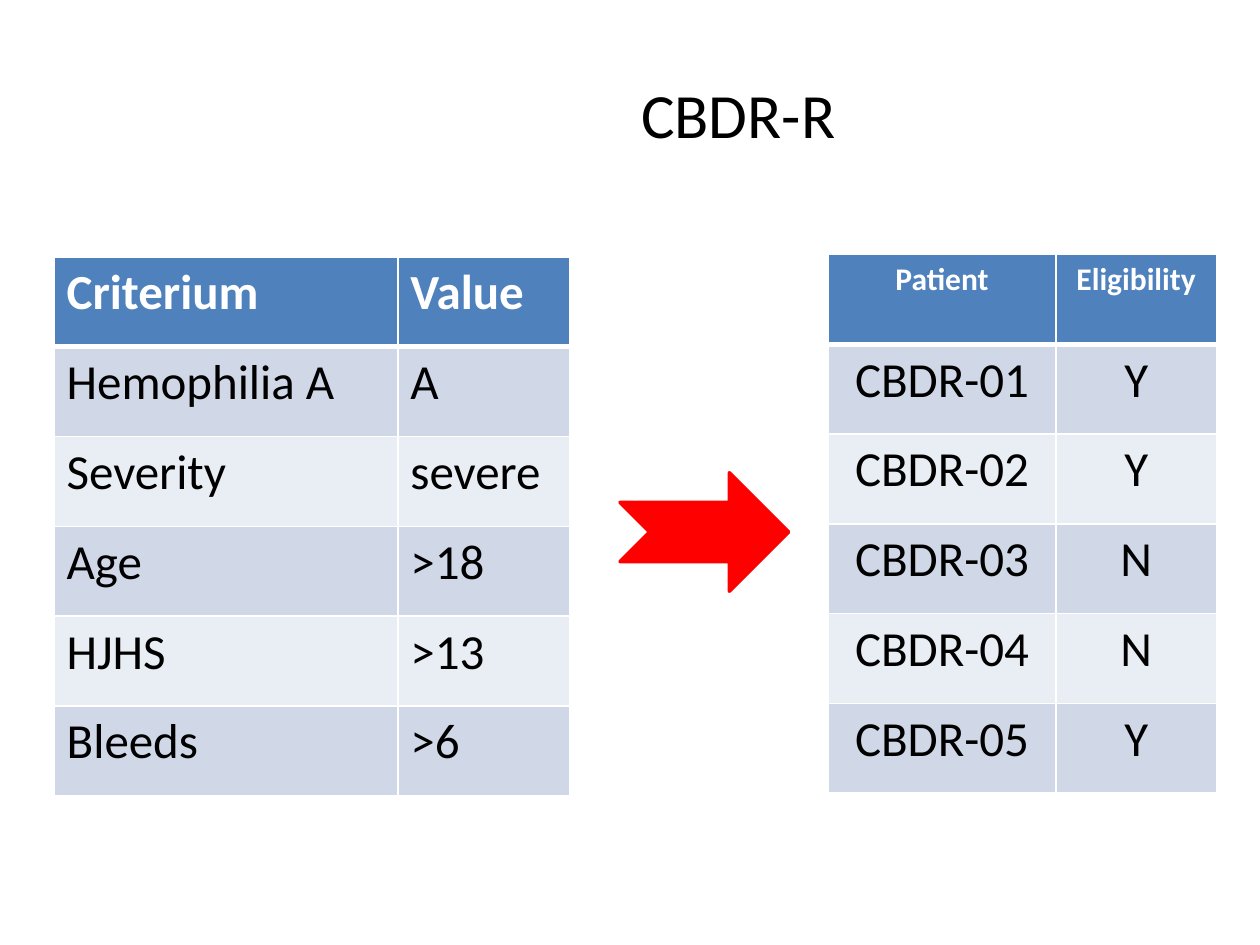
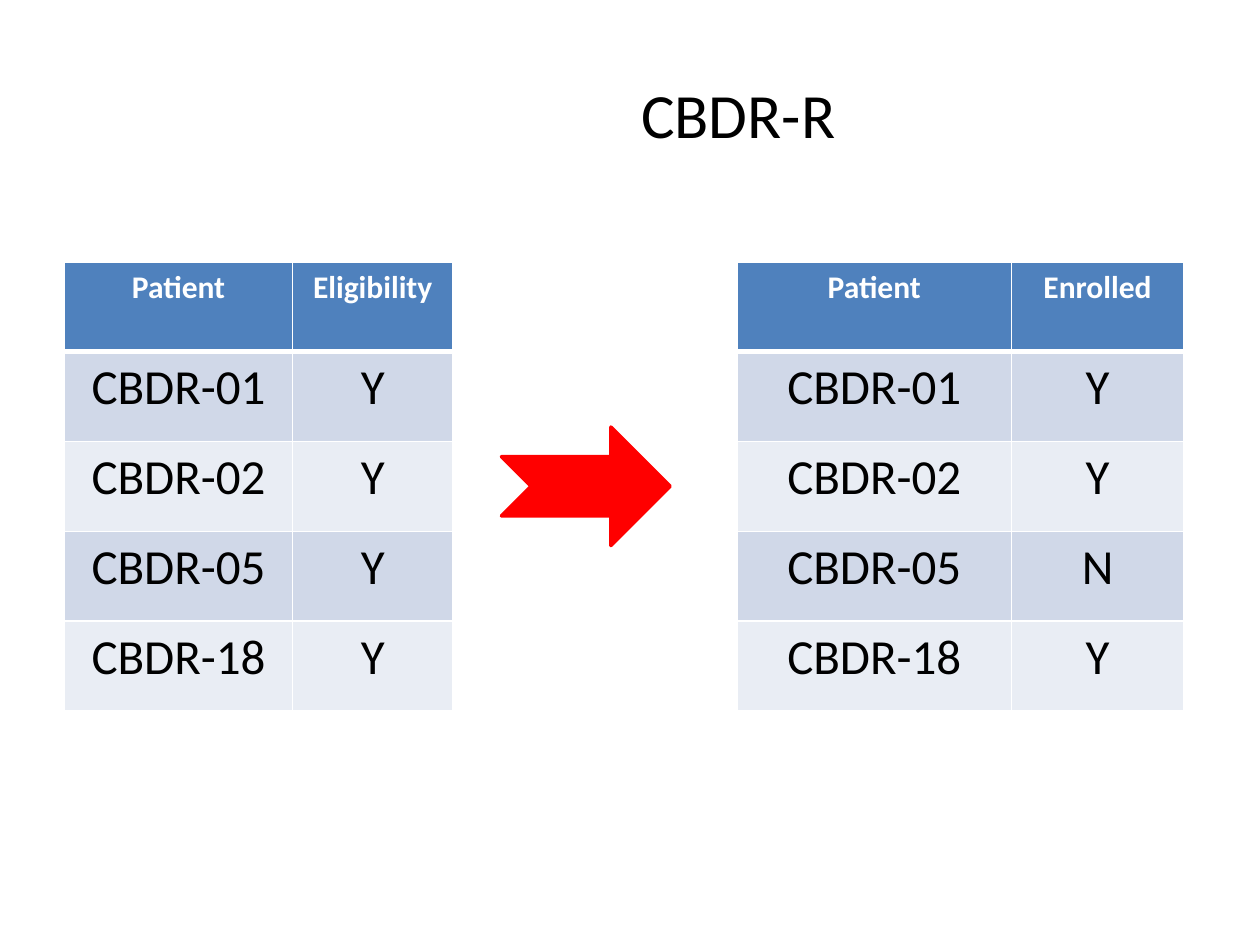
from dataclasses import dataclass
from typing import Any

from lxml import etree
from pptx import Presentation
from pptx import util as u
from pptx.dml.color import RGBColor
from pptx.enum import shapes, text
from pptx.oxml import ns


@dataclass(frozen=True)
class Theme:
    font: str = "Calibri"
    ink: str = "000000"
    paper: str = "FFFFFF"
    header: str = "4F81BD"
    bands: tuple[str, str] = ("D0D8E8", "E9EDF4")
    arrow: str = "FF0000"
    title_size: int = 36
    body_size: int = 28
    label_size: int = 18
    rule: float = 1
    header_rule: float = 3
    arrow_line: float = 2


@dataclass(frozen=True)
class TableSpec:
    """Position and column widths in centimetres; the first row is the header."""
    left: float
    top: float
    widths: tuple[float, float]
    rows: tuple[tuple[str, str], ...]
    centred: bool = True
    header_size: int = Theme.label_size


@dataclass(frozen=True)
class SlideSpec:
    tables: tuple[TableSpec, ...]
    arrow_left: float
    arrow_top: float


THEME = Theme()
TITLE = "CBDR-R"
TITLE_BOX = dict(left=10.11, top=0.76, width=9.55, height=3.05)
ARROW_SIZE = (3.4, 2.39)
ROW_HEIGHT = 1.81
PATIENT_WIDTHS = (4.6, 3.23)

SLIDES = (
    SlideSpec(
        tables=(
            TableSpec(16.69, 5.13, PATIENT_WIDTHS, (
                ("Patient", "Eligibility"), ("CBDR-01", "Y"), ("CBDR-02", "Y"),
                ("CBDR-03", "N"), ("CBDR-04", "N"), ("CBDR-05", "Y"))),
            TableSpec(1.09, 5.18, (6.93, 3.46), (
                ("Criterium", "Value"), ("Hemophilia A", "A"), ("Severity", "severe"),
                ("Age", ">18"), ("HJHS", ">13"), ("Bleeds", ">6")),
                centred=False, header_size=THEME.body_size),
        ),
        arrow_left=12.5, arrow_top=9.53),
    SlideSpec(
        tables=(
            TableSpec(1.3, 5.28, PATIENT_WIDTHS, (
                ("Patient", "Eligibility"), ("CBDR-01", "Y"), ("CBDR-02", "Y"),
                ("CBDR-05", "Y"), ("CBDR-18", "Y"))),
            TableSpec(14.86, 5.28, (5.53, 3.47), (
                ("Patient", "Enrolled"), ("CBDR-01", "Y"), ("CBDR-02", "Y"),
                ("CBDR-05", "N"), ("CBDR-18", "Y"))),
        ),
        arrow_left=10.11, arrow_top=8.61),
)


def format_paragraph(paragraph: Any, size: int, colour: str, bold: bool, centred: bool) -> None:
    paragraph.alignment = text.PP_ALIGN.CENTER if centred else text.PP_ALIGN.LEFT
    for name, value in dict(name=THEME.font, size=u.Pt(size), bold=bold).items():
        setattr(paragraph.font, name, value)
    paragraph.font.color.rgb = RGBColor.from_string(colour)


def set_borders(cell: Any, bottom: float) -> None:
    """Add the four cell borders, which come before the fill."""
    properties = cell._tc.get_or_add_tcPr()
    widths = dict(lnL=THEME.rule, lnR=THEME.rule, lnT=THEME.rule, lnB=bottom)
    for index, (tag, width) in enumerate(widths.items()):
        line = etree.Element(ns.qn(f"a:{tag}"), w=str(u.Pt(width)))
        fill = etree.SubElement(line, ns.qn("a:solidFill"))
        etree.SubElement(fill, ns.qn("a:srgbClr"), val=THEME.paper)
        properties.insert(index, line)


def add_title(slide: Any) -> None:
    title = slide.shapes.title
    for name, value in TITLE_BOX.items():
        setattr(title, name, u.Cm(value))
    title.text_frame.text = TITLE
    title.text_frame.vertical_anchor = text.MSO_ANCHOR.MIDDLE
    format_paragraph(title.text_frame.paragraphs[0], THEME.title_size, THEME.ink, False, True)


def add_banded_table(slide: Any, spec: TableSpec) -> None:
    count = len(spec.rows)
    table = slide.shapes.add_table(
        count, len(spec.widths), u.Cm(spec.left), u.Cm(spec.top),
        u.Cm(sum(spec.widths)), u.Cm(ROW_HEIGHT * count)).table
    for column, width in zip(table.columns, spec.widths):
        column.width = u.Cm(width)
    for row_index, values in enumerate(spec.rows):
        table.rows[row_index].height = u.Cm(ROW_HEIGHT)
        is_header = row_index == 0
        fill = THEME.header if is_header else THEME.bands[(row_index - 1) % 2]
        size = spec.header_size if is_header else THEME.body_size
        colour = THEME.paper if is_header else THEME.ink
        # The rule under the header is shared with the first body row
        top_rule = THEME.header_rule if is_header else THEME.rule
        for column_index, value in enumerate(values):
            cell = table.cell(row_index, column_index)
            cell.text = value
            format_paragraph(cell.text_frame.paragraphs[0], size, colour, is_header, spec.centred)
            cell.fill.solid()
            cell.fill.fore_color.rgb = RGBColor.from_string(fill)
            set_borders(cell, top_rule)
            if row_index == 1:
                cell._tc.tcPr.find(ns.qn("a:lnT")).set("w", str(u.Pt(THEME.header_rule)))


def add_arrow(slide: Any, left: float, top: float) -> None:
    arrow = slide.shapes.add_shape(
        shapes.MSO_SHAPE.NOTCHED_RIGHT_ARROW, u.Cm(left), u.Cm(top),
        *(u.Cm(length) for length in ARROW_SIZE))
    arrow.shadow.inherit = False
    for fill in (arrow.fill, arrow.line.fill):
        fill.solid()
        fill.fore_color.rgb = RGBColor.from_string(THEME.arrow)
    arrow.line.width = u.Pt(THEME.arrow_line)


def main() -> None:
    presentation = Presentation()
    presentation.slide_width, presentation.slide_height = u.Cm(25.4), u.Cm(19.05)
    title_only = presentation.slide_layouts.get_by_name("Title Only")
    for spec in SLIDES:
        slide = presentation.slides.add_slide(title_only)
        add_title(slide)
        for table in spec.tables:
            add_banded_table(slide, table)
        add_arrow(slide, spec.arrow_left, spec.arrow_top)
    presentation.save("out.pptx")


if __name__ == "__main__":
    main()
